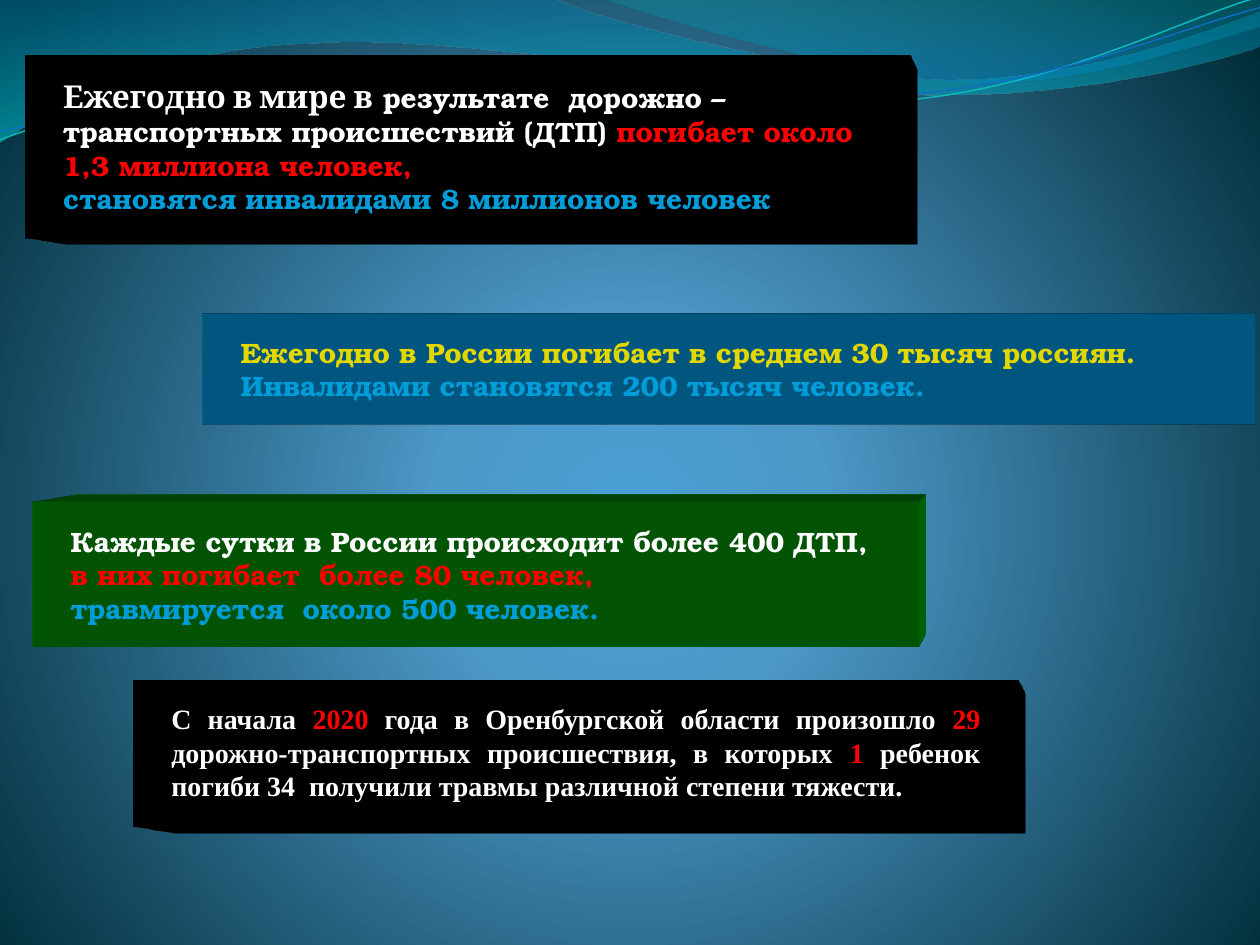
from lxml import etree
from pptx import Presentation
from pptx.dml.color import RGBColor
from pptx.enum.shapes import MSO_SHAPE
from pptx.enum.text import MSO_ANCHOR, PP_ALIGN
from pptx.oxml import parse_xml
from pptx.oxml.ns import nsdecls, qn
from pptx.util import Inches, Pt

RECTANGLE = MSO_SHAPE.RECTANGLE
TOP = MSO_ANCHOR.TOP
LEFT, JUSTIFY = PP_ALIGN.LEFT, PP_ALIGN.JUSTIFY

COLORS = {
    "black": "000000", "white": "FFFFFF", "red": "FF0000", "sky": "009DD9",
    "yellow": "E2D700", "blue": "0170A7", "green": "026E05",
    "teal line": "0AB8BF", "blue line": "0F6FC6",
}
BACKGROUND_STOPS = [(0, "4AA0D6", 100), (25, "4C98C7", 100), (100, "002C38", 100)]
LINEAR_DOWN = '<a:lin ang="5400000" scaled="0"/>'
CIRCLE = ('<a:path path="circle"><a:fillToRect l="10000" t="110000" '
          'r="10000" b="100000"/></a:path>')
SERIF, TIMES = "TeX Gyre Bonum", "Times New Roman"

# Each wave is a list of points: two numbers for a line, six for a curve.
WIDE_WAVE = [(0, 0), (4.4, -0.01), (4.76, 0.17, 6.64, 0.63, 7.58, 0.63),
             (8.53, 0.63, 9.58, 0.26, 10, 0.09), (10.01, 0.36),
             (9.83, 0.44, 8.7, 0.76, 7.46, 0.75),
             (6.22, 0.75, 3.82, 0.28, 2.57, 0.34),
             (1.29, 0.36, 0.46, 0.83, -0.01, 1.13), (0, 0)]
RIGHT_WAVE = [(4.79, -0.01), (5.09, 0.11, 6.82, 0.62, 7.69, 0.65),
              (8.56, 0.69, 9.61, 0.32, 10, 0.21), (10, 0), (4.79, -0.01)]
TEAL_CURVE = [(0, 1.11), (0.48, 0.93, 1.58, 0.57, 2.77, 0.52),
              (3.95, 0.47, 5.93, 0.89, 7.13, 0.8),
              (8.33, 0.71, 9.38, 0.15, 9.98, -0.02)]
BLUE_CURVE = [(0, 1.04), (0.47, 0.96, 1.64, 0.61, 2.83, 0.56),
              (4.03, 0.51, 5.97, 0.84, 7.17, 0.75),
              (8.36, 0.67, 9.41, 0.21, 10, 0.06)]


def color(name):
    return RGBColor.from_string(COLORS[name])


def set_gradient(fill, properties, stops, direction):
    """Fill with stops of (position, colour, opacity), all in percent."""
    fill.solid()
    marks = "".join(
        f'<a:gs pos="{position * 1000}"><a:srgbClr val="{value}">'
        f'<a:alpha val="{opacity * 1000}"/></a:srgbClr></a:gs>'
        for position, value, opacity in stops)
    gradient = parse_xml(f'<a:gradFill {nsdecls("a")} rotWithShape="1">'
                         f'<a:gsLst>{marks}</a:gsLst>{direction}</a:gradFill>')
    properties.replace(properties.find(qn("a:solidFill")), gradient)


def set_background(slide):
    fill = slide.background.fill
    fill.solid()
    properties = slide.element.find(f'.//{qn("p:bgPr")}')
    set_gradient(fill, properties, BACKGROUND_STOPS, CIRCLE)


def add_outline(slide, segments, close):
    """Draw straight segments, then bend those that have control points."""
    ends = [(Inches(segment[-2]), Inches(segment[-1])) for segment in segments]
    builder = slide.shapes.build_freeform(*ends[0])
    builder.add_line_segments(ends[1:], close=close)
    outline = builder.convert_to_shape()
    outline.shadow.inherit = False
    outline.line.fill.background()
    lines = list(outline.element.iter(qn("a:lnTo")))
    for line, segment in zip(lines, segments[1:]):
        if len(segment) == 6:
            curve = etree.Element(qn("a:cubicBezTo"))
            for x, y in zip(segment[::2], segment[1::2]):
                etree.SubElement(curve, qn("a:pt"), x=str(Inches(x) - outline.left),
                                 y=str(Inches(y) - outline.top))
            line.getparent().replace(line, curve)
    return outline


def add_wave(slide, segments, stops):
    wave = add_outline(slide, segments, close=True)
    set_gradient(wave.fill, wave.element.spPr, stops, LINEAR_DOWN)


def add_curve(slide, segments, stroke, width):
    curve = add_outline(slide, segments, close=False)
    curve.fill.background()
    curve.line.color.rgb = color(stroke)
    curve.line.width = Pt(width)


def extrude(box, view, fill):
    """Raise the box as a solid block seen from the given side."""
    scene = (f'<a:scene3d {nsdecls("a")}><a:camera prst="legacyPerspective{view}"/>'
             '<a:lightRig rig="legacyFlat3" dir="b"/></a:scene3d>')
    solid = (f'<a:sp3d {nsdecls("a")} extrusionH="430200" prstMaterial="legacyMatte">'
             '<a:bevelT w="13500" h="13500" prst="angle"/>'
             '<a:bevelB w="13500" h="13500" prst="angle"/>'
             f'<a:extrusionClr><a:srgbClr val="{COLORS[fill]}"/></a:extrusionClr>'
             '</a:sp3d>')
    for part in (scene, solid):
        box.element.spPr.append(parse_xml(part))


def add_span(para, text, ink="white", font=SERIF, size=16):
    span = para.add_run()
    span.text = text
    span.font.name = font
    span.font.size = Pt(size)
    span.font.bold = True
    span.font.color.rgb = color(ink)


def add_panel(slide, left, top, width, height, fill, view, paragraphs, align=LEFT):
    box = slide.shapes.add_shape(RECTANGLE, Inches(left), Inches(top),
                                 Inches(width), Inches(height))
    box.shadow.inherit = False
    box.fill.solid()
    box.fill.fore_color.rgb = color(fill)
    box.line.fill.background()
    extrude(box, view, fill)
    frame = box.text_frame
    frame.word_wrap = True
    frame.vertical_anchor = TOP
    frame.margin_left = frame.margin_right = Inches(0.3)
    frame.margin_top = frame.margin_bottom = Inches(0.17)
    for index, spans in enumerate(paragraphs):
        para = frame.add_paragraph() if index else frame.paragraphs[0]
        para.alignment = align
        for text, style in spans:
            add_span(para, text, **style)


def main():
    deck = Presentation()
    deck.slide_width, deck.slide_height = Inches(10), Inches(7.5)
    slide = deck.slides.add_slide(deck.slide_layouts[6])
    set_background(slide)
    add_wave(slide, WIDE_WAVE, [(0, "0074A1", 45), (100, "00C6CF", 55)])
    add_wave(slide, RIGHT_WAVE, [(0, "00A1A9", 30), (80, "008BBF", 45)])
    add_curve(slide, TEAL_CURVE, "teal line", 0.85)
    add_curve(slide, BLUE_CURVE, "blue line", 0.75)

    red, sky = {"ink": "red"}, {"ink": "sky"}
    add_panel(slide, 0.2, 0.44, 7.02, 1.44, "black", "BottomRight", [
        [("Ежегодно в мире в", {"font": "Cambria", "size": 18}),
         (" результате  дорожно – транспортных происшествий (ДТП) ", {}),
         ("погибает около 1,3 миллиона человек,", red)],
        [("становятся инвалидами 8 миллионов человек", sky)]])

    add_panel(slide, 0.26, 3.99, 7.02, 1.14, "green", "TopRight", [
        [("Каждые сутки в России происходит более 400 ДТП,", {})],
        [("в них погибает  более 80 человек,", red)],
        [("травмируется  около 500 человек.", sky)]])

    add_panel(slide, 1.61, 2.49, 8.35, 0.88, "blue", "Front", [
        [("Ежегодно в России погибает в среднем 30 тысяч россиян.",
          {"ink": "yellow"})],
        [("Инвалидами становятся 200 тысяч человек.", sky)]])

    plain, number = {"font": TIMES}, {"font": TIMES, "ink": "red"}
    add_panel(slide, 1.06, 5.4, 7.02, 1.15, "black", "BottomRight", [
        [("С начала ", plain), ("2020", number),
         (" года в Оренбургской области произошло ", plain), ("29", number),
         (" дорожно-транспортных происшествия, в которых ", plain), ("1", number),
         (" ребенок погиби 34  получили травмы различной степени тяжести.", plain)],
    ], align=JUSTIFY)
    deck.save("out.pptx")


if __name__ == "__main__":
    main()
